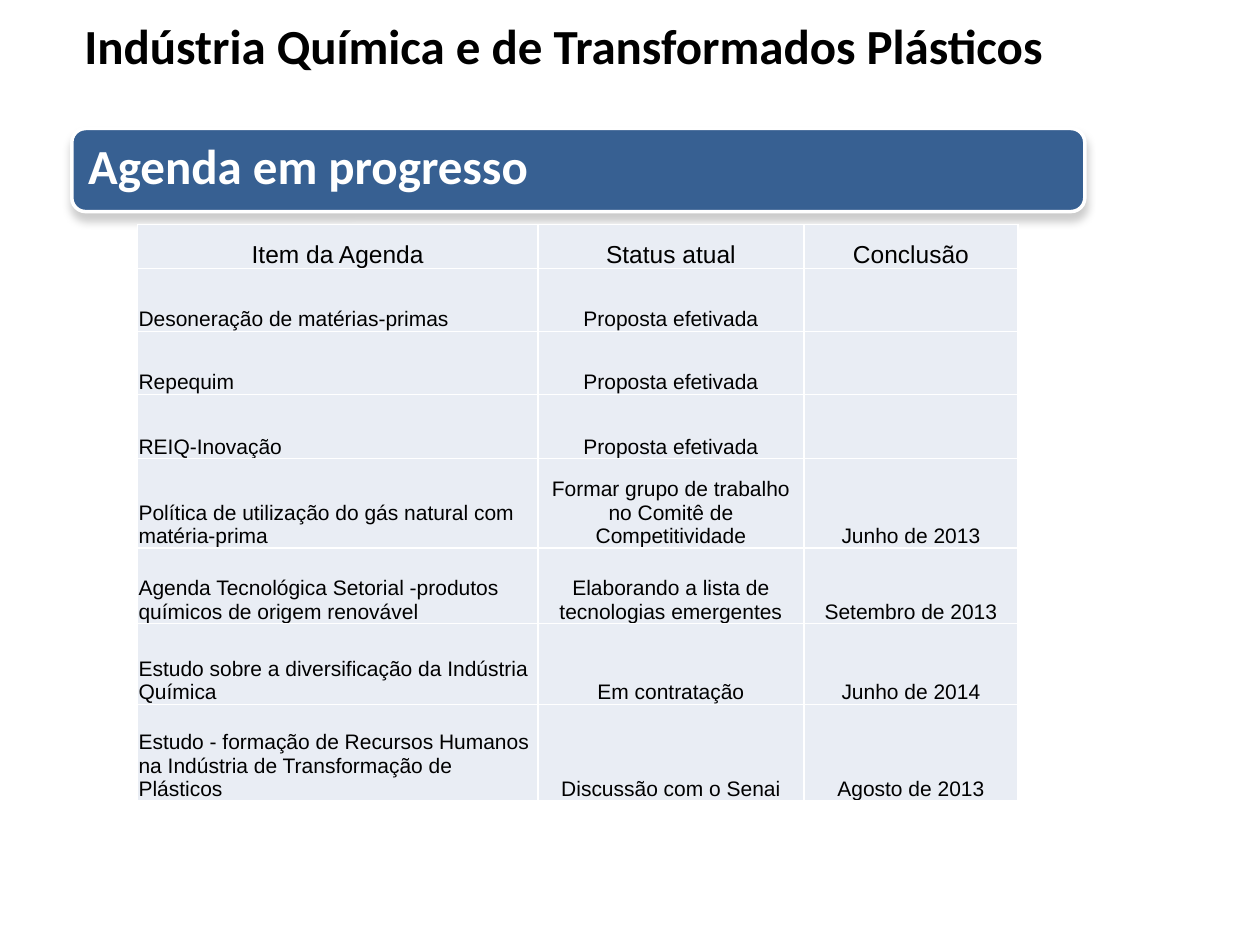
from lxml import etree
from pptx import Presentation
from pptx.dml.color import RGBColor
from pptx.enum import shapes, text
from pptx.oxml.ns import qn
from pptx.util import Inches, Pt

WHITE, BLACK, BLUE, PALE = "FFFFFF", "000000", "376092", "E9EDF4"

COLUMN_WIDTHS = [3.18, 2.11, 1.7]
ROW_HEIGHTS = [0.35, 0.5, 0.5, 0.51, 0.71, 0.6, 0.64, 0.77]
AGENDA = [
    ("Item da Agenda", "Status atual", "Conclusão"),
    ("Desoneração de matérias-primas", "Proposta efetivada", ""),
    ("Repequim", "Proposta efetivada", ""),
    ("REIQ-Inovação", "Proposta efetivada", ""),
    ("Política de utilização do gás natural com matéria-prima",
     "Formar grupo de trabalho no Comitê de Competitividade", "Junho de 2013"),
    ("Agenda Tecnológica Setorial -produtos químicos de origem renovável",
     "Elaborando a lista de tecnologias emergentes", "Setembro de 2013"),
    ("Estudo sobre a diversificação da Indústria Química",
     "Em contratação", "Junho de 2014"),
    ("Estudo - formação de Recursos Humanos na Indústria de Transformação de Plásticos",
     "Discussão com o Senai", "Agosto de 2013"),
]


def color(hex_value):
    return RGBColor.from_string(hex_value)


def write(para, words, size, font, hex_value, bold=False, align=text.PP_ALIGN.LEFT):
    para.alignment = align
    span = para.add_run()
    span.text = words
    span.font.size = Pt(size)
    span.font.name = font
    span.font.bold = bold
    span.font.color.rgb = color(hex_value)


def add_child(parent, tag, **attributes):
    return etree.SubElement(parent, qn(tag), attributes)


def add_title(page, left, top, width, height):
    title = page.shapes.title
    title.left, title.top, title.width, title.height = map(Inches, (left, top, width, height))
    frame = title.text_frame
    frame.word_wrap = False
    frame.auto_size = text.MSO_AUTO_SIZE.SHAPE_TO_FIT_TEXT
    frame.vertical_anchor = text.MSO_ANCHOR.TOP
    para = frame.paragraphs[0]
    para.space_before = Pt(0)
    write(para, "Indústria Química e de Transformados Plásticos", 28, "Calibri", BLACK, bold=True)


def add_drop_shadow(shape):
    shape.shadow.inherit = False
    effects = shape._element.spPr.find(qn("a:effectLst"))
    shadow = add_child(effects, "a:outerShdw", blurRad=str(Pt(5)), dist=str(Pt(4)),
                       dir="5400000", rotWithShape="0")
    shade = add_child(shadow, "a:srgbClr", val=BLACK)
    add_child(shade, "a:alpha", val="20000")


def add_banner(page, left, top, width, height):
    banner = page.shapes.add_shape(shapes.MSO_SHAPE.ROUNDED_RECTANGLE,
                                   *map(Inches, (left, top, width, height)))
    banner.fill.solid()
    banner.fill.fore_color.rgb = color(BLUE)
    banner.line.color.rgb = color(WHITE)
    banner.line.width = Pt(2)
    add_drop_shadow(banner)
    frame = banner.text_frame
    frame.word_wrap = True
    frame.vertical_anchor = text.MSO_ANCHOR.MIDDLE
    para = frame.paragraphs[0]
    para.line_spacing = 0.82
    write(para, "Agenda em progresso", 28, "Calibri", WHITE, bold=True)


def add_borders(cell):
    """Draw thin white lines; they must come before the cell's fill."""
    properties = cell._tc.get_or_add_tcPr()
    for side in ("a:lnL", "a:lnR", "a:lnT", "a:lnB"):
        line = add_child(properties, side, w=str(Pt(1)))
        add_child(add_child(line, "a:solidFill"), "a:srgbClr", val=WHITE)


def fill_cell(cell, words, size, align):
    add_borders(cell)
    cell.fill.solid()
    cell.fill.fore_color.rgb = color(PALE)
    cell.margin_left = cell.margin_right = cell.margin_top = Inches(0.01)
    cell.margin_bottom = 0
    cell.vertical_anchor = text.MSO_ANCHOR.BOTTOM
    if words:
        write(cell.text_frame.paragraphs[0], words, size, "Arial", BLACK, align=align)


def add_agenda(page, left, top, width, height):
    table = page.shapes.add_table(len(AGENDA), len(COLUMN_WIDTHS),
                                  *map(Inches, (left, top, width, height))).table
    for column, column_width in zip(table.columns, COLUMN_WIDTHS):
        column.width = Inches(column_width)
    for row, row_height in zip(table.rows, ROW_HEIGHTS):
        row.height = Inches(row_height)
    for i, entries in enumerate(AGENDA):
        for j, words in enumerate(entries):
            is_item = i > 0 and j == 0
            fill_cell(table.cell(i, j), words, 12 if i else 14,
                      text.PP_ALIGN.LEFT if is_item else text.PP_ALIGN.CENTER)


def main():
    deck = Presentation()
    deck.slide_width, deck.slide_height = Inches(10), Inches(7.5)
    page = deck.slides.add_slide(deck.slide_layouts[5])
    add_title(page, 0.57, 0.07, 7.87, 0.57)
    add_banner(page, 0.57, 1.02, 8.04, 0.66)
    add_agenda(page, 1.09, 1.78, sum(COLUMN_WIDTHS), sum(ROW_HEIGHTS))
    deck.save("out.pptx")


if __name__ == "__main__":
    main()
